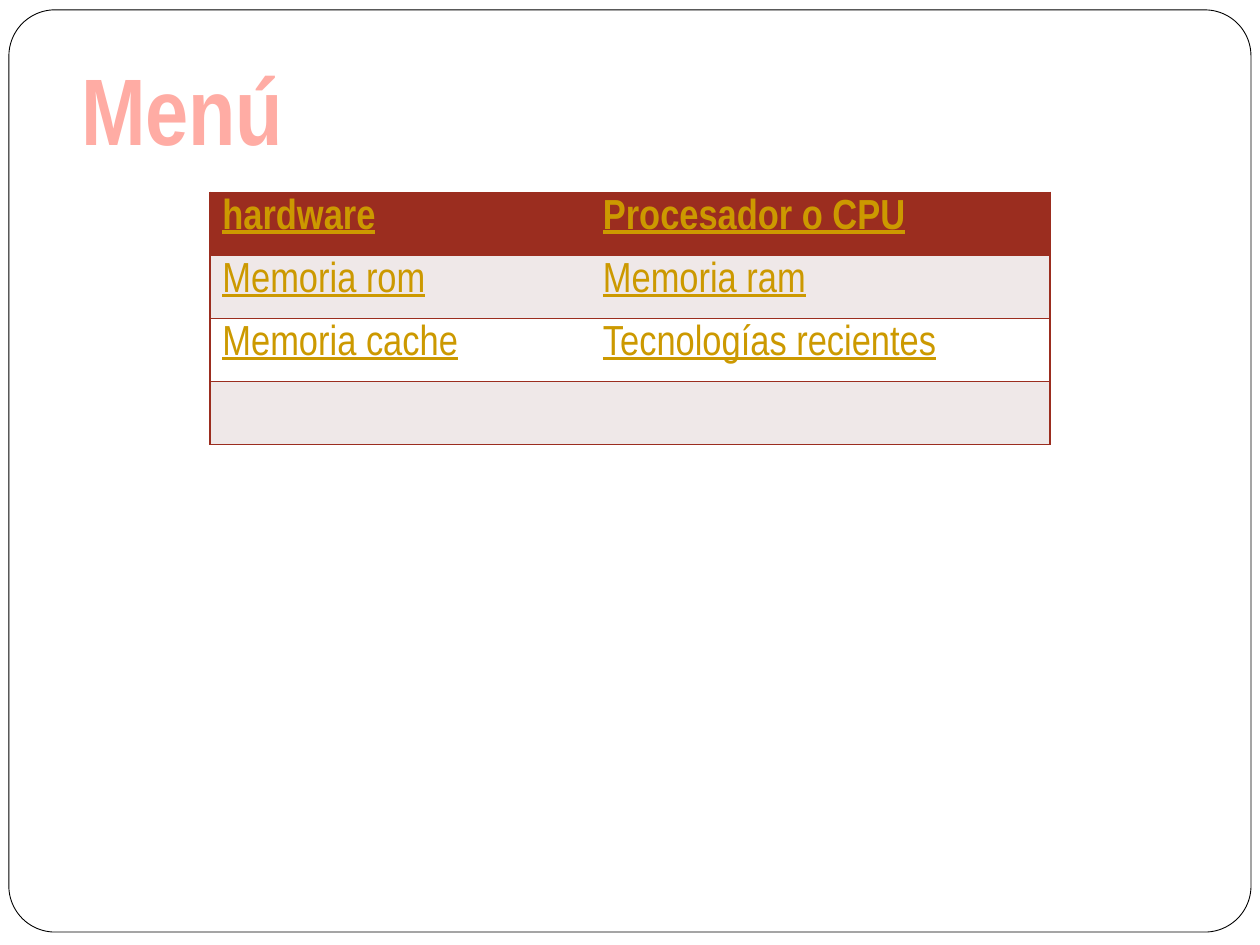
from pptx import Presentation
from pptx.dml.color import RGBColor
from pptx.enum.shapes import MSO_SHAPE as Shape
from pptx.enum.text import MSO_ANCHOR as Anchor, MSO_AUTO_SIZE as Fit, PP_ALIGN as Align
from pptx.oxml.ns import qn
from pptx.util import Cm, Pt
from lxml.etree import SubElement as Sub


def tint(code):
    return RGBColor.from_string(code)


class Deck:
    """Hold the style and the current slide of the menu."""

    font = "Arial Narrow"
    brick, gold, rose = "9B2D1F", "CC9900", "FFACA4"
    pale, white, black = "EFE8E8", "FFFFFF", "000000"

    def __init__(self):
        self.prs = Presentation()
        self.prs.slide_width, self.prs.slide_height = Cm(25.4), Cm(19.05)
        self.slide = self.prs.slides.add_slide(self.prs.slide_layouts[5])

    def style(self, para, size, color, bold, line=False):
        for run in para.runs:
            font = run.font
            font.name, font.size = self.font, Pt(size)
            font.bold, font.underline = bold, line
            font.color.rgb = tint(color)

    def frame(self, x, y, w, h):
        card = self.slide.shapes.add_shape(Shape.ROUNDED_RECTANGLE, Cm(x), Cm(y), Cm(w), Cm(h))
        card.adjustments[0] = 0.05
        card.shadow.inherit = False
        card.fill.solid()
        card.fill.fore_color.rgb = tint(self.white)
        card.line.color.rgb = tint(self.black)
        card.line.width = Pt(0.5)
        self.slide.shapes._spTree.insert(2, card._element)

    def title(self, text, x, y, w, h):
        head = self.slide.shapes.title
        head.left, head.top, head.width, head.height = Cm(x), Cm(y), Cm(w), Cm(h)
        body = head.text_frame
        body.text = text
        body.word_wrap, body.auto_size = False, Fit.NONE
        body.vertical_anchor = Anchor.TOP
        para = body.paragraphs[0]
        para.alignment = Align.CENTER
        self.style(para, 54, self.rose, True)

    def edge(self, cell, sides):
        props = cell._tc.get_or_add_tcPr()
        for i, side in enumerate("LRTB"):
            line = props.makeelement(qn(f"a:ln{side}"), {"w": str(Pt(1))})
            if side in sides:
                fill = Sub(line, qn("a:solidFill"))
                Sub(fill, qn("a:srgbClr"), val=self.brick)
            else:
                Sub(line, qn("a:noFill"))
            props.insert(i, line)

    def table(self, rows, x, y, wide, tall):
        grid = self.slide.shapes.add_table(
            len(rows), len(wide), Cm(x), Cm(y), Cm(sum(wide)), Cm(tall * len(rows))).table
        for col, width in zip(grid.columns, wide):
            col.width = Cm(width)
        for r, row in enumerate(rows):
            grid.rows[r].height = Cm(tall)
            back = self.brick if r == 0 else self.pale if r % 2 else self.white
            for c, text in enumerate(row):
                cell = grid.cell(r, c)
                cell.text = text
                cell.fill.solid()
                cell.fill.fore_color.rgb = tint(back)
                self.style(cell.text_frame.paragraphs[0], 24, self.gold, r == 0, True)
                self.edge(cell, "LTB" if c == 0 else "RTB")


def main():
    deck = Deck()
    deck.frame(0.18, 0.2, 25.04, 18.59)
    deck.title("Menú ", 0.89, 0.91, 6, 2.57)
    rows = [
        ("hardware", "Procesador o CPU"),
        ("Memoria rom", "Memoria ram"),
        ("Memoria cache", "Tecnologías recientes"),
        ("", ""),
    ]
    deck.table(rows, 4.23, 3.88, (7.67, 9.27), 1.27)
    deck.prs.save("out.pptx")


if __name__ == "__main__":
    main()
